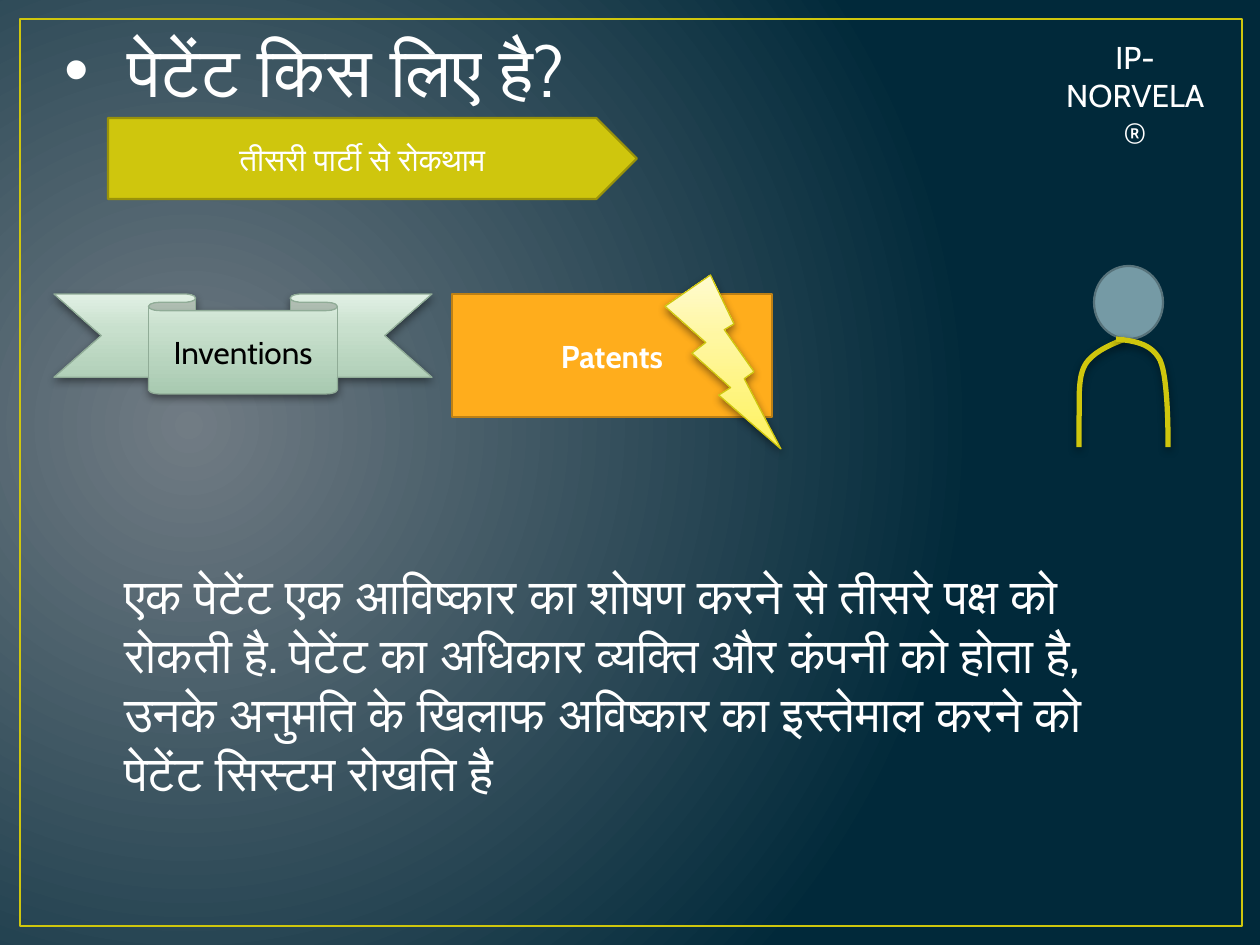
"""Build the slide on what a patent is for."""
from lxml.etree import SubElement
from pptx import Presentation
from pptx.dml.color import RGBColor
from pptx.enum.shapes import MSO_SHAPE
from pptx.enum.text import MSO_ANCHOR, PP_ALIGN
from pptx.oxml.ns import qn
from pptx.util import Pt

EMU_PER_PX = 914400 / 126
FONT = "Cabin"
WHITE = RGBColor(0xFF, 0xFF, 0xFF)
BLACK = RGBColor(0, 0, 0)
OLIVE = RGBColor(0xCF, 0xC6, 0x0D)
DARK_OLIVE = RGBColor(0x99, 0x92, 0x0A)
ORANGE = RGBColor(0xFF, 0xAD, 0x1C)
BROWN = RGBColor(0xBD, 0x80, 0x15)
STEEL = RGBColor(0x75, 0x9A, 0xA5)
DARK_STEEL = RGBColor(0x57, 0x72, 0x7A)
SAGE = RGBColor(0x90, 0xAC, 0x97)

BACKDROP = [(0, RGBColor(0x71, 0x7C, 0x84)), (100, RGBColor(0x01, 0x29, 0x3A))]
BACKDROP_FOCUS = {"l": 15, "t": 50, "r": 85, "b": 60}
YELLOWS = [(0, RGBColor(0xFE, 0xF2, 0x5E)), (65, RGBColor(0xFF, 0xF7, 0xA2)),
           (100, RGBColor(0xFF, 0xFB, 0xCF))]
GREENS = [(0, RGBColor(0xA8, 0xC9, 0xB0)), (65, RGBColor(0xC8, 0xE0, 0xCD)),
          (100, RGBColor(0xE1, 0xF0, 0xE4))]

TITLE = "पेटेंट किस लिए है?"
BODY = ("एक पेटेंट एक आविष्कार का शोषण करने से तीसरे पक्ष को रोकती है. "
        "पेटेंट का अधिकार व्यक्ति और कंपनी को होता है, उनके अनुमति के खिलाफ "
        "अविष्कार का इस्तेमाल करने को पेटेंट सिस्टम रोखति है")
BRAND = "IP-NORVELA®"

FRAME = (MSO_SHAPE.RECTANGLE, (20, 19, 1222, 907), None, OLIVE, 1.5)
HEAD = (MSO_SHAPE.OVAL, (1094, 266, 69, 73), STEEL, DARK_STEEL, 1.25)
PATENTS = (MSO_SHAPE.RECTANGLE, (452, 294, 320, 123), ORANGE, BROWN, 1.25)
BOLT = (MSO_SHAPE.LIGHTNING_BOLT, (665, 275, 116, 174), YELLOWS, OLIVE, 0.75)
INVENTIONS = (MSO_SHAPE.DOWN_RIBBON, (54, 294, 378, 100), GREENS, SAGE, 0.75)
PREVENTION = (MSO_SHAPE.PENTAGON, (108, 118, 529, 81), OLIVE, DARK_OLIVE, 1.25)
ARMS = [
    [(1125, 339), (1109, 345), (1092, 353), (1085, 365), (1077, 379),
     (1080, 404), (1079, 420), (1079, 432), (1079, 447), (1079, 447)],
    [(1116, 339), (1134, 341), (1151, 343), (1160, 360), (1169, 379),
     (1168, 447), (1168, 447)],
]
CURVE_STEPS = 16


def px(length):
    return round(length * EMU_PER_PX)


def set_gradient(fill, holder, stops, focus=None):
    fill.solid()
    solid = holder.find(qn("a:solidFill"))
    gradient = solid.makeelement(qn("a:gradFill"), {"rotWithShape": "1"})
    holder.replace(solid, gradient)
    stop_list = SubElement(gradient, qn("a:gsLst"))
    for position, color in stops:
        stop = SubElement(stop_list, qn("a:gs"), pos=str(position * 1000))
        SubElement(stop, qn("a:srgbClr"), val=str(color))
    if focus:
        circle = SubElement(gradient, qn("a:path"), path="circle")
        SubElement(circle, qn("a:fillToRect"),
                   {side: str(share * 1000) for side, share in focus.items()})
    else:
        SubElement(gradient, qn("a:lin"), ang=str(270 * 60000), scaled="0")


def add_shadow(shape):
    effects = shape.element.spPr.find(qn("a:effectLst"))
    shadow = SubElement(effects, qn("a:outerShdw"), blurRad=str(Pt(5)),
                        dist=str(Pt(2)), dir=str(90 * 60000), rotWithShape="0")
    color = SubElement(shadow, qn("a:srgbClr"), val=str(BLACK))
    SubElement(color, qn("a:alpha"), val="43000")


def style(shape, fill, line, width):
    shape.shadow.inherit = False
    if fill is None:
        shape.fill.background()
    elif isinstance(fill, list):
        set_gradient(shape.fill, shape.element.spPr, fill)
    else:
        shape.fill.solid()
        shape.fill.fore_color.rgb = fill
    shape.line.color.rgb = line
    shape.line.width = Pt(width)


def add_figure(slide, kind, box, fill, line, width):
    figure = slide.shapes.add_shape(kind, *map(px, box))
    style(figure, fill, line, width)
    return figure


def write(shape, text, size=18, color=WHITE, bold=False, align=PP_ALIGN.CENTER):
    shape.text_frame.word_wrap = True
    paragraph = shape.text_frame.paragraphs[0]
    paragraph.alignment = align
    run = paragraph.add_run()
    run.text = text
    run.font.name = FONT
    run.font.size = Pt(size)
    run.font.bold = bold
    run.font.color.rgb = color
    return paragraph


def label(shape, text, **look):
    shape.text_frame.vertical_anchor = MSO_ANCHOR.MIDDLE
    write(shape, text, **look)


def add_text(slide, box, text, **look):
    textbox = slide.shapes.add_textbox(*map(px, box))
    return textbox, write(textbox, text, **look)


def curve_points(nodes):
    for first in range(0, len(nodes) - 1, 3):
        controls = nodes[first:first + 4]
        for step in range(1, CURVE_STEPS + 1):
            t = step / CURVE_STEPS
            weights = ((1 - t) ** 3, 3 * t * (1 - t) ** 2, 3 * t * t * (1 - t), t ** 3)
            yield tuple(px(sum(w * node[axis] for w, node in zip(weights, controls)))
                        for axis in (0, 1))


def add_arm(slide, nodes):
    builder = slide.shapes.build_freeform(*map(px, nodes[0]))
    builder.add_line_segments(curve_points(nodes), close=False)
    arm = builder.convert_to_shape()
    style(arm, None, OLIVE, 3)
    add_shadow(arm)


def main():
    deck = Presentation()
    deck.slide_width, deck.slide_height = px(1260), px(945)
    slide = deck.slides.add_slide(deck.slide_layouts[6])
    backdrop = slide.background.fill
    backdrop.solid()
    set_gradient(backdrop, slide.element.find(".//" + qn("p:bgPr")),
                 BACKDROP, BACKDROP_FOCUS)

    add_figure(slide, *FRAME)
    _, title = add_text(slide, (52, 21, 644, 97), TITLE, size=40, align=PP_ALIGN.LEFT)
    properties = title._p.get_or_add_pPr()
    properties.set("marL", str(px(63)))
    properties.set("indent", str(px(-63)))
    SubElement(properties, qn("a:buFont"), typeface="Arial")
    SubElement(properties, qn("a:buChar"), char="•")

    add_figure(slide, *HEAD)
    for nodes in ARMS:
        add_arm(slide, nodes)
    label(add_figure(slide, *PATENTS), "Patents", bold=True)
    add_shadow(add_figure(slide, *BOLT))
    inventions = add_figure(slide, *INVENTIONS)
    add_shadow(inventions)
    label(inventions, "Inventions", color=BLACK)

    body, _ = add_text(slide, (112, 441, 1050, 428), BODY, size=28, align=PP_ALIGN.LEFT)
    body.text_frame.margin_top = px(125)
    label(add_figure(slide, *PREVENTION), "तीसरी पार्टी से रोकथाम")
    add_text(slide, (1050, 32, 170, 50), BRAND)
    deck.save("out.pptx")


if __name__ == "__main__":
    main()
